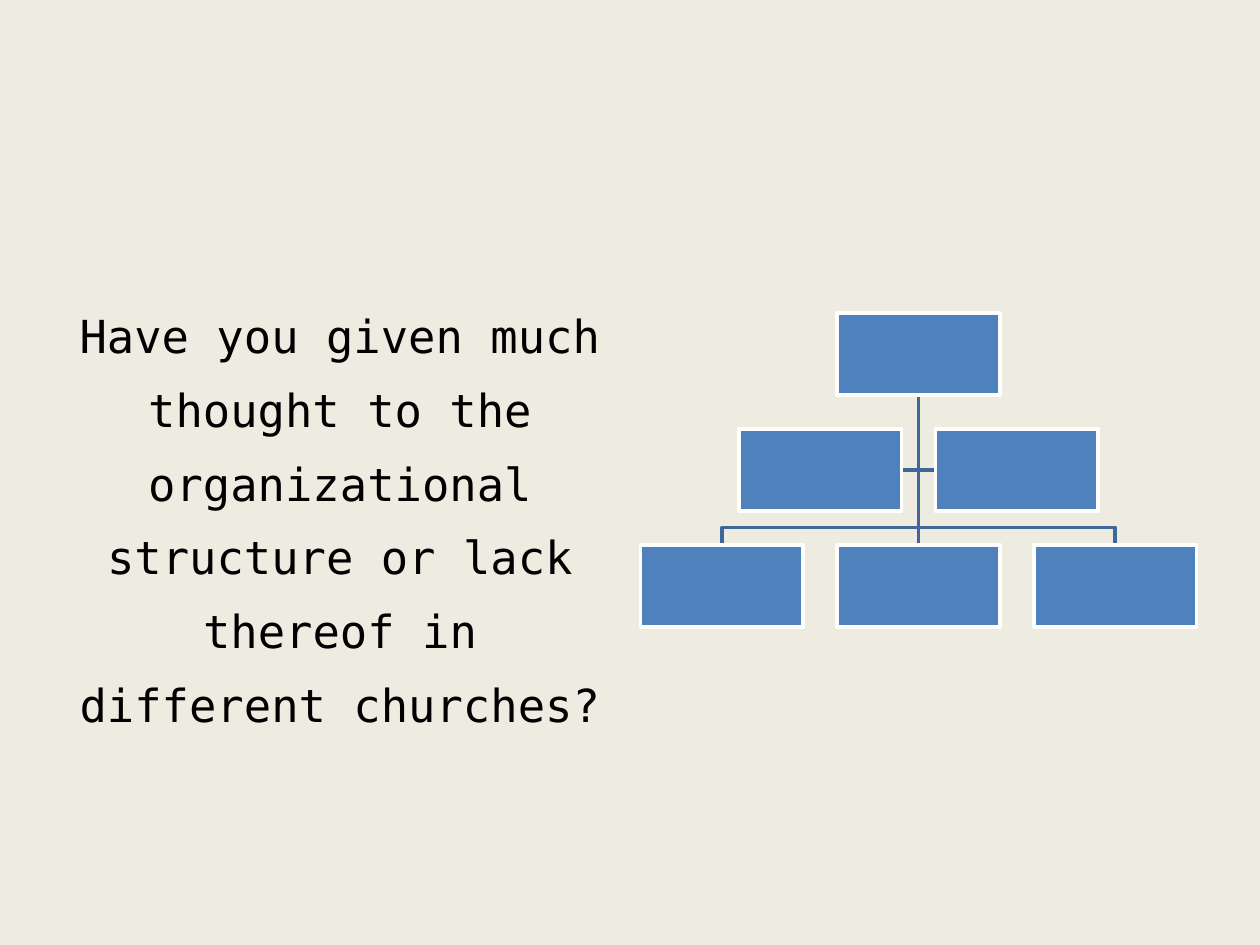
from lxml import etree
from pptx import Presentation, util as u
from pptx.dml.color import RGBColor
from pptx.enum import shapes, text
from pptx.oxml.ns import qn


def rgb(value):
    return RGBColor.from_string(value)


class Chart:
    """Style and current slide of an organization chart on a column and row grid."""

    FONT, INK, PAPER = "DejaVu Sans Mono", "000000", "EEECE1"
    BOX, BORDER, LINE = "4F81BD", "FFFFFF", "3F6797"
    LEFT, TOP, COL, ROW = 5.73, 2.81, 1.56, 0.92
    WIDTH, HEIGHT = 1.29, 0.65

    def __init__(self, prs):
        self.prs = prs
        self.s = prs.slides.add_slide(prs.slide_layouts[1])
        fill = self.s.background.fill
        fill.solid()
        fill.fore_color.rgb = rgb(self.PAPER)
        title = self.s.shapes.title.element
        title.getparent().remove(title)

    def body(self, words, x, y, w, h):
        sp = self.s.placeholders[1]
        W, H = self.prs.slide_width, self.prs.slide_height
        place = dict(left=int(x * W), top=int(y * H), width=int(w * W), height=int(h * H))
        tf = sp.text_frame
        tf.text = words
        p = tf.paragraphs[0]
        formats = (
            (sp, place),
            (tf, dict(word_wrap=True, auto_size=text.MSO_AUTO_SIZE.NONE,
                      vertical_anchor=text.MSO_ANCHOR.MIDDLE)),
            (p, dict(alignment=text.PP_ALIGN.CENTER, line_spacing=1.35, space_before=u.Pt(0))),
            (p.runs[0].font, dict(name=self.FONT, size=u.Pt(26))),
        )
        for target, values in formats:
            for key, value in values.items():
                setattr(target, key, value)
        p.runs[0].font.color.rgb = rgb(self.INK)
        pPr = p._p.get_or_add_pPr()
        for key in ("marL", "indent"):
            pPr.set(key, "0")
        etree.SubElement(pPr, qn("a:buNone"))

    def point(self, col, row):
        return u.Inches(self.LEFT + col * self.COL), u.Inches(self.TOP + row * self.ROW)

    def stroke(self, sp, color):
        sp.line.color.rgb = rgb(color)
        sp.line.width = u.Pt(2)

    def box(self, col, row):
        x, y = self.point(col, row)
        w, h = u.Inches(self.WIDTH), u.Inches(self.HEIGHT)
        sp = self.s.shapes.add_shape(shapes.MSO_SHAPE.RECTANGLE, x - w // 2, y - h // 2, w, h)
        sp.shadow.inherit = False
        sp.fill.solid()
        sp.fill.fore_color.rgb = rgb(self.BOX)
        self.stroke(sp, self.BORDER)
        return sp

    def send_back(self, sp):
        sp.element.getparent().insert(2, sp.element)

    def branch(self, *points):
        start, *rest = points
        builder = self.s.shapes.build_freeform(*start)
        builder.add_line_segments(rest, close=False)
        sp = builder.convert_to_shape()
        sp.shadow.inherit = False
        sp.fill.background()
        self.stroke(sp, self.LINE)
        self.send_back(sp)

    def trunk(self, upper, lower):
        sp = self.s.shapes.add_connector(shapes.MSO_CONNECTOR.STRAIGHT, 0, 0, 0, 0)
        sp.begin_connect(upper, 2)
        sp.end_connect(lower, 0)
        self.stroke(sp, self.LINE)
        etree.SubElement(sp.element.spPr, qn("a:effectLst"))
        self.send_back(sp)


def main():
    prs = Presentation()
    prs.slide_width, prs.slide_height = u.Inches(10), u.Inches(7.5)
    chart = Chart(prs)
    chart.body("Have you given much thought to the organizational structure "
               "or lack thereof in different churches?", 0.05, 0.21, 0.44, 0.66)

    head = chart.box(1, 0)
    reports = [chart.box(col, 2) for col in range(3)]
    assistants = [chart.box(col, 1) for col in (0.5, 1.5)]

    x, bottom = head.left + head.width // 2, head.top + head.height
    for sp, side in zip(assistants, (sp.left + sp.width * (sp.left < head.left) for sp in assistants)):
        y = sp.top + sp.height // 2
        chart.branch((x, bottom), (x, y), (side, y))
    for sp in reports[::2]:
        end = sp.left + sp.width // 2
        bus = sp.top - u.Inches(0.14)
        chart.branch((x, bottom), (x, bus), (end, bus), (end, sp.top))
    chart.trunk(head, reports[1])
    prs.save("out.pptx")


if __name__ == "__main__":
    main()
